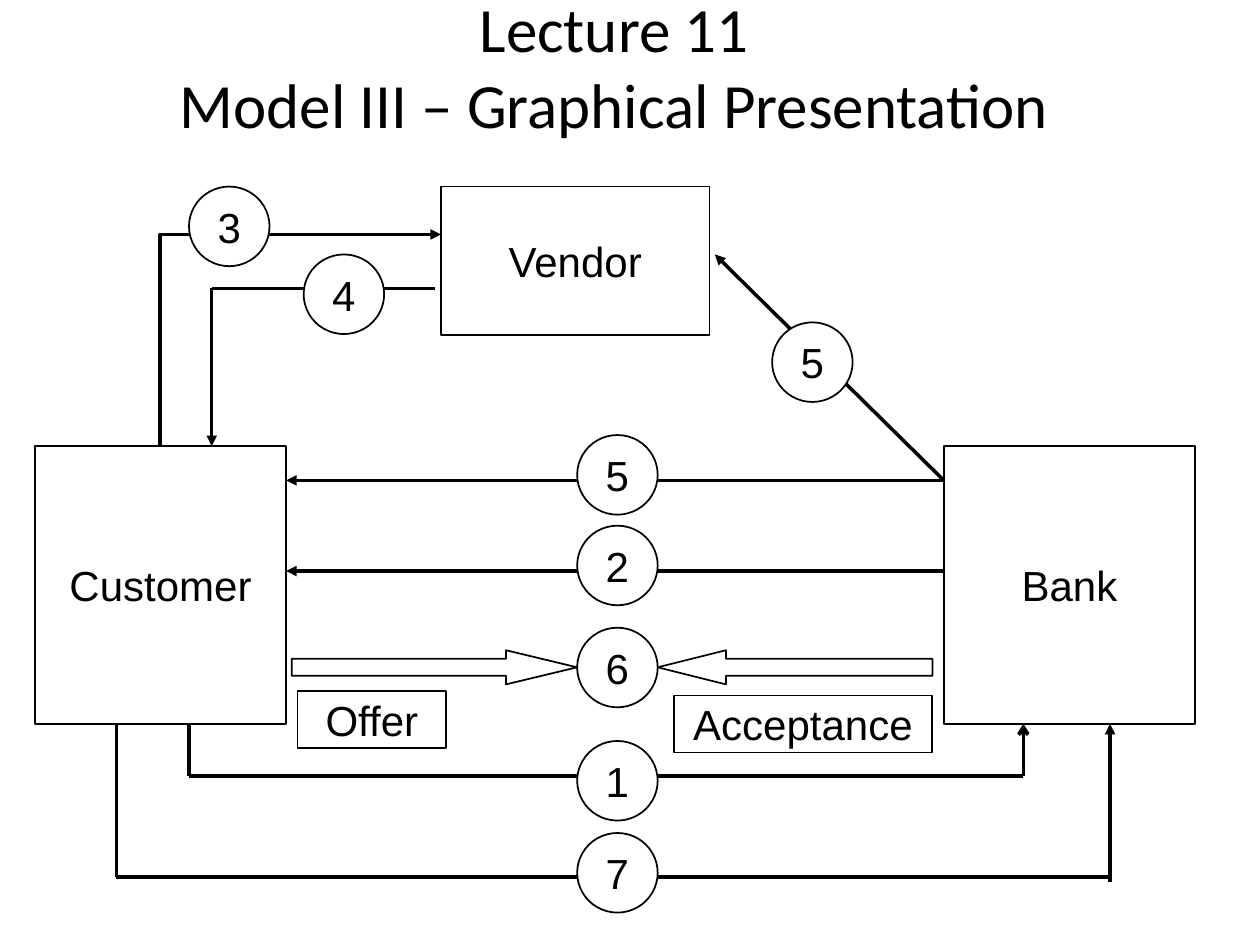
"""Build the Model III slide: flows between customer, vendor and bank."""
from typing import NamedTuple

from lxml import etree
from pptx import Presentation
from pptx import util as u
from pptx.dml.color import RGBColor
from pptx.enum import shapes, text
from pptx.oxml import ns

BLACK, WHITE = "000000", "FFFFFF"
SHAPE = shapes.MSO_SHAPE


class Box(NamedTuple):
    label: str
    left: float
    top: float
    width: float
    height: float


class Step(NamedTuple):
    number: str
    left: float
    top: float


class Line(NamedTuple):
    begin: tuple[float, float]
    end: tuple[float, float]
    head: str = ""


class BlockArrow(NamedTuple):
    kind: SHAPE
    left: float
    width: float
    head_ratio: float


BANK_LEFT, BANK_BOTTOM = 539.3, 413.6
CUSTOMER_RIGHT, SIDE_TOP = 163.5, 255
CENTRE_LEFT = 329.8
STEP_WIDTH, STEP_HEIGHT = 46, 45.5

BOXES = [
    Box("Customer", 20, SIDE_TOP, 143.5, 158.6),
    Box("Vendor", 252, 106.6, 153.4, 85),
    Box("Bank", BANK_LEFT, SIDE_TOP, 143.7, 158.6),
    Box("Offer", 170, 395, 85, 32.5),
    Box("Acceptance", 385, 397.5, 147.6, 32.5),
]
STEPS = [
    Step("3", 108, 106.6),
    Step("4", 173.5, 145.4),
    Step("5", 441.2, 184.2),
    Step("5", CENTRE_LEFT, 248.6),
    Step("2", CENTRE_LEFT, 300.4),
    Step("6", CENTRE_LEFT, 358.7),
    Step("1", CENTRE_LEFT, 423.4),
    Step("7", CENTRE_LEFT, 476),
]
LINES = [
    Line((BANK_LEFT, 274.5), (408.5, 145.4), "triangle"),
    Line((BANK_LEFT, 274.5), (CUSTOMER_RIGHT, 274.5), "triangle"),
    Line((BANK_LEFT, 326.3), (CUSTOMER_RIGHT, 326.3), "triangle"),
    Line((248.4, 164.8), (121, 164.8)),
    Line((121, 164.8), (121, SIDE_TOP), "triangle"),
    Line((108, BANK_BOTTOM), (108, 443.4)),
    Line((108, 443.4), (584.8, 443.4)),
    Line((584.8, 443.4), (584.8, BANK_BOTTOM), "arrow"),
    Line((66.5, BANK_BOTTOM), (66.5, 501.2)),
    Line((66.5, 501.2), (634.3, 501.2)),
    Line((634.3, 504), (634.3, BANK_BOTTOM), "triangle"),
]
BLOCK_ARROWS = [
    BlockArrow(SHAPE.RIGHT_ARROW, 166.8, 163, 2.08),
    BlockArrow(SHAPE.LEFT_ARROW, 375.8, 157, 2),
]


def colour(value: str) -> RGBColor:
    """Turn a hex string into a colour."""
    return RGBColor.from_string(value)


def write_text(shape, words: str, *, font: str = "Arial", size: float = 24, wrap: bool = False) -> None:
    """Write centred text, one paragraph per line of words."""
    frame = shape.text_frame
    frame.word_wrap = wrap
    frame.vertical_anchor = text.MSO_ANCHOR.MIDDLE
    frame.text = words
    for paragraph in frame.paragraphs:
        paragraph.alignment = text.PP_ALIGN.CENTER
        paragraph.font.name = font
        paragraph.font.size = u.Pt(size)
        paragraph.font.color.rgb = colour(BLACK)


def draw_shape(slide, kind: SHAPE, left: float, top: float, width: float, height: float, label: str = ""):
    """Draw a white shape with a thin black outline."""
    shape = slide.shapes.add_shape(kind, u.Pt(left), u.Pt(top), u.Pt(width), u.Pt(height))
    shape.shadow.inherit = False
    shape.fill.solid()
    shape.fill.fore_color.rgb = colour(WHITE)
    shape.line.color.rgb = colour(BLACK)
    shape.line.width = u.Pt(1)
    if label:
        write_text(shape, label)
    return shape


def draw_line(slide, line: Line, kind=shapes.MSO_CONNECTOR.STRAIGHT):
    """Draw a black connector with an optional arrowhead at its end."""
    connector = slide.shapes.add_connector(kind, *map(u.Pt, line.begin + line.end))
    connector.line.color.rgb = colour(BLACK)
    connector.line.width = u.Pt(2)
    if line.head:
        etree.SubElement(connector.line._get_or_add_ln(), ns.qn("a:tailEnd"), type=line.head)
    etree.SubElement(connector._element.spPr, ns.qn("a:effectLst"))
    return connector


def draw_elbow(slide, line: Line) -> None:
    """Draw a one-bend connector that runs up and then right."""
    (x1, y1), (x2, y2) = line.begin, line.end
    middle_x, middle_y = (x1 + x2) / 2, (y1 + y2) / 2
    half_width, half_height = (y1 - y2) / 2, (x2 - x1) / 2
    turned = Line(
        (middle_x + half_width, middle_y + half_height),
        (middle_x - half_width, middle_y - half_height),
        line.head,
    )
    properties = draw_line(slide, turned, shapes.MSO_CONNECTOR.ELBOW)._element.spPr
    properties.find(ns.qn("a:xfrm")).set("rot", "5400000")
    properties.find(ns.qn("a:prstGeom")).set("prst", "bentConnector2")


def main() -> None:
    """Build and save the slide."""
    presentation = Presentation()
    presentation.slide_width, presentation.slide_height = u.Pt(720), u.Pt(540)
    slide = presentation.slides.add_slide(presentation.slide_layouts[6])
    title = slide.shapes.add_textbox(u.Pt(2), u.Pt(0), u.Pt(698), u.Pt(75))
    write_text(title, "Lecture 11\nModel III – Graphical Presentation", font="Calibri", size=36, wrap=True)
    for line in LINES:
        draw_line(slide, line)
    draw_elbow(slide, Line((91.5, SIDE_TOP), (252, 134), "triangle"))
    for box in BOXES:
        draw_shape(slide, SHAPE.RECTANGLE, box.left, box.top, box.width, box.height, box.label)
    for step in STEPS:
        draw_shape(slide, SHAPE.OVAL, step.left, step.top, STEP_WIDTH, STEP_HEIGHT, step.number)
    for arrow in BLOCK_ARROWS:
        shape = draw_shape(slide, arrow.kind, arrow.left, 371.6, arrow.width, 19.5)
        shape.adjustments[1] = arrow.head_ratio
    presentation.save("out.pptx")


if __name__ == "__main__":
    main()
